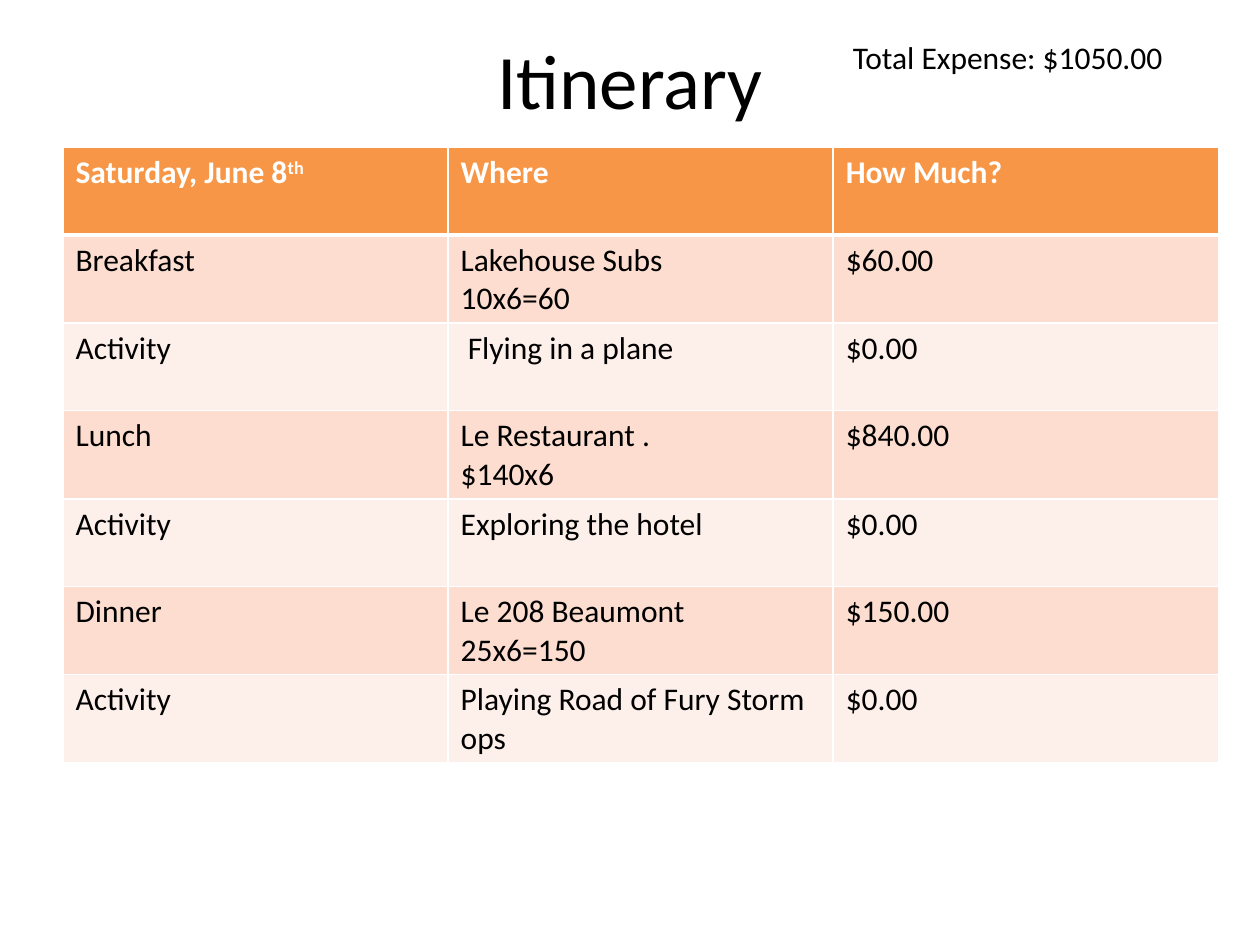
from dataclasses import dataclass

from lxml import etree
from pptx import Presentation
from pptx.dml.color import RGBColor
from pptx.enum.text import MSO_ANCHOR, PP_ALIGN
from pptx.oxml.ns import qn
from pptx.util import Inches, Pt

CENTER = PP_ALIGN.CENTER
MIDDLE = MSO_ANCHOR.MIDDLE
TITLE_ONLY = 5


@dataclass(frozen=True)
class Theme:
    font: str = "Calibri"
    title: int = 44
    body: int = 18
    ink: str = "000000"
    white: str = "FFFFFF"
    head: str = "F79646"
    bands: tuple[str, str] = ("FCDDCF", "FDEFE9")
    thin: int = 1
    thick: int = 3


@dataclass(frozen=True)
class Entry:
    event: str
    place: str
    cost: str


THEME = Theme()
HEADS = ("Saturday, June 8", "Where", "How Much?")
ENTRIES = (
    Entry("Breakfast", "Lakehouse Subs\n10x6=60", "$60.00"),
    Entry("Activity", " Flying in a plane", "$0.00"),
    Entry("Lunch", "Le Restaurant .\n$140x6", "$840.00"),
    Entry("Activity", "Exploring the hotel", "$0.00"),
    Entry("Dinner", "Le 208 Beaumont\n25x6=150", "$150.00"),
    Entry("Activity", "Playing Road of Fury Storm ops", "$0.00"),
)


def style(frame, size: int, color: str, bold: bool = False) -> None:
    for para in frame.paragraphs:
        font = para.font
        font.name, font.size, font.bold = THEME.font, Pt(size), bold
        font.color.rgb = RGBColor.from_string(color)


def edge(cell, side: str, width: int) -> None:
    props = cell._tc.get_or_add_tcPr()
    line = etree.SubElement(props, qn(f"a:ln{side}"), w=str(Pt(width)))
    fill = etree.SubElement(line, qn("a:solidFill"))
    etree.SubElement(fill, qn("a:srgbClr"), val=THEME.white)


def draw_cell(cell, text: str, row: int) -> None:
    """Fill one cell; row 0 is the header, with a thick rule below it."""
    top = THEME.thick if row == 1 else THEME.thin
    bottom = THEME.thick if row == 0 else THEME.thin
    # The schema wants the edges in this order, ahead of the fill.
    for side, width in (("L", THEME.thin), ("R", THEME.thin), ("T", top), ("B", bottom)):
        edge(cell, side, width)
    is_head = row == 0
    cell.text = text
    style(cell.text_frame, THEME.body, THEME.white if is_head else THEME.ink, is_head)
    cell.fill.solid()
    color = THEME.head if is_head else THEME.bands[(row - 1) % 2]
    cell.fill.fore_color.rgb = RGBColor.from_string(color)


def draw_table(slide) -> None:
    rows = [HEADS] + [(item.event, item.place, item.cost) for item in ENTRIES]
    table = slide.shapes.add_table(
        len(rows), len(HEADS), Inches(0.5), Inches(1.17), Inches(9.17), Inches(4.86)
    ).table
    for row, texts in enumerate(rows):
        for col, text in enumerate(texts):
            draw_cell(table.cell(row, col), text, row)
    suffix = table.cell(0, 0).text_frame.paragraphs[0].add_run()
    suffix.text = "th"
    suffix._r.get_or_add_rPr().set("baseline", "30000")


def draw_title(slide) -> None:
    title = slide.shapes.title
    title.left, title.top = Inches(0.5), Inches(0)
    title.width, title.height = Inches(9), Inches(1.25)
    frame = title.text_frame
    frame.text = "Itinerary"
    frame.vertical_anchor = MIDDLE
    frame.paragraphs[0].alignment = CENTER
    style(frame, THEME.title, THEME.ink)


def draw_total(slide) -> None:
    box = slide.shapes.add_textbox(Inches(6.67), Inches(0.25), Inches(3.08), Inches(0.4))
    frame = box.text_frame
    frame.word_wrap = True
    frame.text = "Total Expense: $1050.00"
    style(frame, THEME.body, THEME.ink)


def main() -> None:
    deck = Presentation()
    deck.slide_width, deck.slide_height = Inches(10), Inches(7.5)
    slide = deck.slides.add_slide(deck.slide_layouts[TITLE_ONLY])
    draw_title(slide)
    draw_total(slide)
    draw_table(slide)
    deck.save("out.pptx")


if __name__ == "__main__":
    main()
